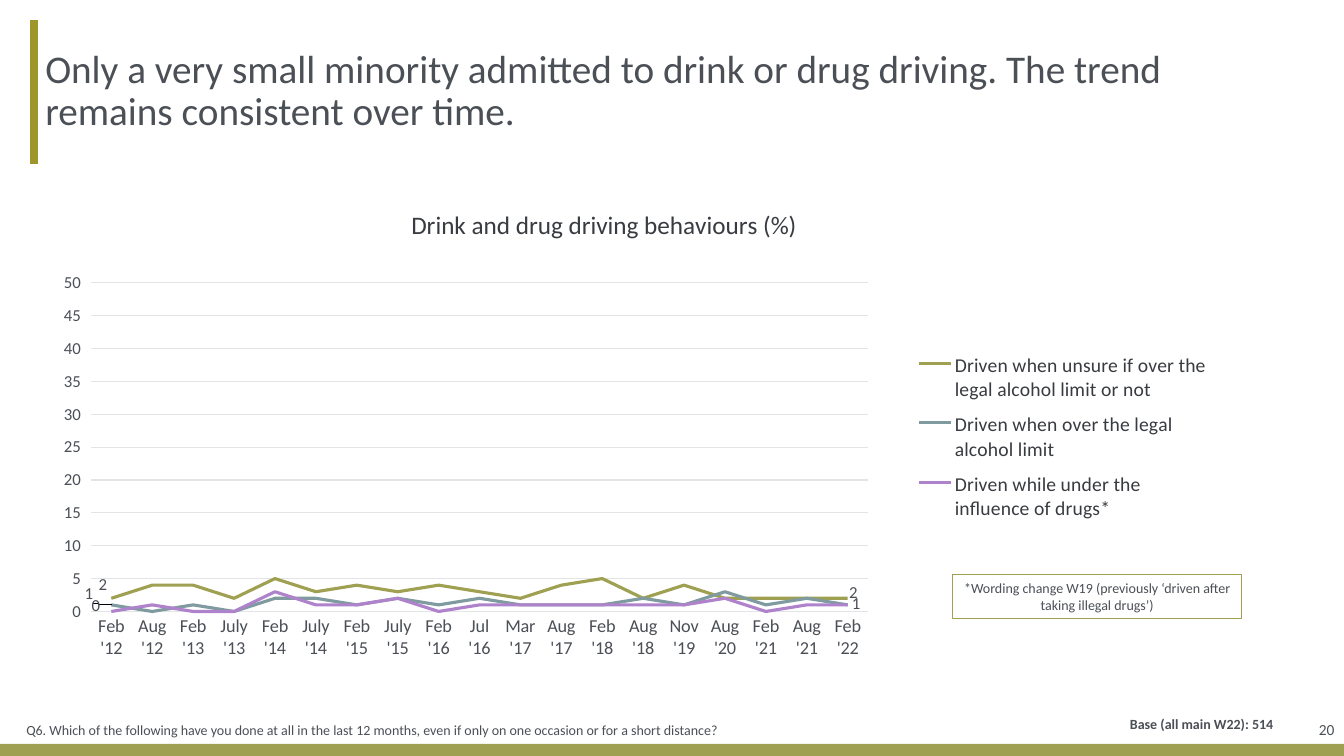
import pptx
import pptx.util
import pptx.chart.data
import pptx.dml.color
import pptx.enum.chart
import pptx.enum.shapes
import pptx.enum.text
import pptx.oxml

Pt = pptx.util.Pt
rgb = pptx.dml.color.RGBColor.from_string
ALIGN = pptx.enum.text.PP_ALIGN
GREY, DARK, PALE, OLIVE = "4B4F56", "383B40", "E3E4E7", "9FA052"
CHART_W, CHART_H = 867.6, 355.7


def write_text(sp, text, size=10, bold=False, align=ALIGN.LEFT, spacing=1.0,
               margins=(5.76, 0, 0, 0), box=None, bullet_off=False):
    if box:
        sp.left, sp.top, sp.width, sp.height = [Pt(v) for v in box]
    tf = sp.text_frame
    tf.word_wrap = True
    tf.auto_size = pptx.enum.text.MSO_AUTO_SIZE.NONE
    tf.vertical_anchor = pptx.enum.text.MSO_ANCHOR.MIDDLE
    tf.margin_left, tf.margin_top, tf.margin_right, tf.margin_bottom = [Pt(m) for m in margins]
    p = tf.paragraphs[0]
    p.alignment, p.line_spacing, p.space_before = align, spacing, Pt(0)
    if bullet_off:
        pPr = p._p.get_or_add_pPr()
        pPr.set("marL", "0")
        pPr.set("indent", "0")
        pPr.append(pptx.oxml.parse_xml(
            '<a:buNone xmlns:a="http://schemas.openxmlformats.org/drawingml/2006/main"/>'))
    r = p.add_run()
    r.text = text
    r.font.name, r.font.size, r.font.bold = "Calibri", Pt(size), bold
    r.font.color.rgb = rgb(GREY)


def manual_layout(parent, index, **values):
    """Place a chart part; values are the layout's own elements, in order."""
    for old in parent.xpath("c:layout"):
        parent.remove(old)
    items = "".join(f'<c:{tag} val="{val}"/>' for tag, val in values.items())
    parent.insert(index, pptx.oxml.parse_xml(
        '<c:layout xmlns:c="http://schemas.openxmlformats.org/drawingml/2006/chart">'
        f'<c:manualLayout>{items}</c:manualLayout></c:layout>'))


prs = pptx.Presentation()
prs.slide_width, prs.slide_height = Pt(960), Pt(540)
s = prs.slides.add_slide(prs.slide_layouts[1])

# Bottom band and title rule
RECT = pptx.enum.shapes.MSO_SHAPE.RECTANGLE
band = s.shapes.add_shape(RECT, Pt(0), Pt(531.4), Pt(960), Pt(10.8))
band.shadow.inherit = False
band.fill.solid()
band.fill.fore_color.rgb = rgb(OLIVE)
band.line.fill.background()
rule = s.shapes.add_connector(pptx.enum.shapes.MSO_CONNECTOR.STRAIGHT,
                              Pt(24.5), Pt(14.4), Pt(24.5), Pt(117.4))
rule.line.color.rgb = rgb("9F962B")
rule.line.width = Pt(6)
rule._element.spPr.append(pptx.oxml.parse_xml(
    '<a:effectLst xmlns:a="http://schemas.openxmlformats.org/drawingml/2006/main"/>'))

# Title, question, base and page number
write_text(s.shapes.title,
           "Only a very small minority admitted to drink or drug driving. "
           "The trend remains consistent over time.",
           size=28, spacing=0.9, box=(26.6, 14.4, 838.8, 102.2))
write_text(s.placeholders[1],
           "Q6. Which of the following have you done at all in the last 12 months, "
           "even if only on one occasion or for a short distance?",
           box=(13, 509.8, 609.8, 23.8), bullet_off=True)
for text, box, fmt in [
    ("Base (all main W22): 514", (632.9, 505.5, 283.7, 23), dict(bold=True, margins=(5.76, 0, 7.2, 0))),
    ("20", (894.2, 500.4, 66.2, 41.8), dict(size=11, margins=(7.2, 3.6, 7.2, 3.6))),
]:
    sp = s.shapes.add_textbox(*[Pt(v) for v in box])
    write_text(sp, text, align=ALIGN.RIGHT, **fmt)

# Line chart
months = ["Feb '12", "Aug '12", "Feb '13", "July '13", "Feb '14", "July '14", "Feb '15",
          "July '15", "Feb '16", "Jul '16", "Mar '17", "Aug '17", "Feb '18", "Aug '18",
          "Nov '19", "Aug '20", "Feb '21", "Aug '21", "Feb '22"]
# Name, colour, values, labelled points with label offsets in points
behaviours = [
    ("Driven when unsure if over the legal alcohol limit or not", OLIVE,
     (2, 4, 4, 2, 5, 3, 4, 3, 4, 3, 2, 4, 5, 2, 4, 2, 2, 2, 2), {0: (-6, 0), 18: (4, 6)}),
    ("Driven when over the legal alcohol limit", "7F9B9F",
     (1, 0, 1, 0, 2, 2, 1, 2, 1, 2, 1, 1, 1, 2, 1, 3, 1, 2, 1), {0: (-16, 2)}),
    ("Driven while under the influence of drugs*", "AF82CC",
     (0, 1, 0, 0, 3, 1, 1, 2, 0, 1, 1, 1, 1, 1, 1, 2, 0, 1, 1), {0: (-11, 6), 18: (6, 9)}),
]
data = pptx.chart.data.CategoryChartData()
data.categories = months
for name, colour, values, labels in behaviours:
    data.add_series(name, values)
chart = s.shapes.add_chart(pptx.enum.chart.XL_CHART_TYPE.LINE, Pt(38.9), Pt(127.4),
                           Pt(CHART_W), Pt(CHART_H), data).chart
chart.font.name, chart.font.size = "Calibri", Pt(10)
chart.font.color.rgb = rgb(GREY)
chart.plots[0].vary_by_categories = False

# Chart title, legend and axes
chart.has_title = True
chart.chart_title.include_in_layout = False
title_p = chart.chart_title.text_frame.paragraphs[0]
title_r = title_p.add_run()
title_r.text = "Drink and drug driving behaviours (%)"
chart.has_legend = True
chart.legend.position = pptx.enum.chart.XL_LEGEND_POSITION.RIGHT
chart.legend.include_in_layout = False
cat_axis, val_axis = chart.category_axis, chart.value_axis
TICK = pptx.enum.chart.XL_TICK_MARK
cat_axis.major_tick_mark, val_axis.major_tick_mark = TICK.NONE, TICK.OUTSIDE
val_axis.minimum_scale, val_axis.maximum_scale, val_axis.major_unit = 0, 50, 5
val_axis.format.line.fill.background()
for line in (cat_axis.format.line, val_axis.major_gridlines.format.line):
    line.color.rgb = rgb(PALE)
    line.width = Pt(0.75)

# Series lines and their end labels
fonts = [(title_r.font, 18, DARK), (chart.legend.font, 14, DARK),
         (cat_axis.tick_labels.font, 13, GREY), (val_axis.tick_labels.font, 12, GREY)]
for series, (name, colour, values, labels) in zip(chart.plots[0].series, behaviours):
    series.smooth = False
    series.format.line.color.rgb = rgb(colour)
    series.format.line.width = Pt(2.25)
    series.data_labels.show_value = False
    for i, (dx, dy) in labels.items():
        label = series.points[i].data_label
        fonts.append((label.font, 12, GREY))
        label.position = pptx.enum.chart.XL_LABEL_POSITION.ABOVE
        dLbl = series.data_labels._element.xpath(f'c:dLbl[c:idx/@val="{i}"]')[0]
        manual_layout(dLbl, 1, x=dx / CHART_W, y=dy / CHART_H)
for font, size, colour in fonts:
    font.name, font.size, font.bold = "Calibri", Pt(size), False
    font.color.rgb = rgb(colour)

# Positions inside the chart
edge = dict(xMode="edge", yMode="edge")
for tag, index, values in [
    ("title", 1, dict(edge, x=0.29, y=0.05)),
    ("plotArea", 0, dict(layoutTarget="inner", **edge, x=0.03, y=0.21, w=0.64, h=0.66)),
    ("legend", 1, dict(edge, x=0.71, y=0.33, w=0.24, h=0.38)),
]:
    manual_layout(chart.element.xpath(f"c:chart/c:{tag}")[0], index, **values)

# Wording note
note = s.shapes.add_shape(RECT, Pt(680.4), Pt(410.4), Pt(206.6), Pt(31.7))
note.shadow.inherit = False
note.fill.background()
note.line.color.rgb = rgb(OLIVE)
note.line.width = Pt(0.75)
write_text(note, "*Wording change W19 (previously ‘driven after taking illegal drugs’)",
           align=ALIGN.CENTER, margins=(7.2, 3.6, 7.2, 3.6))

prs.save("out.pptx")
